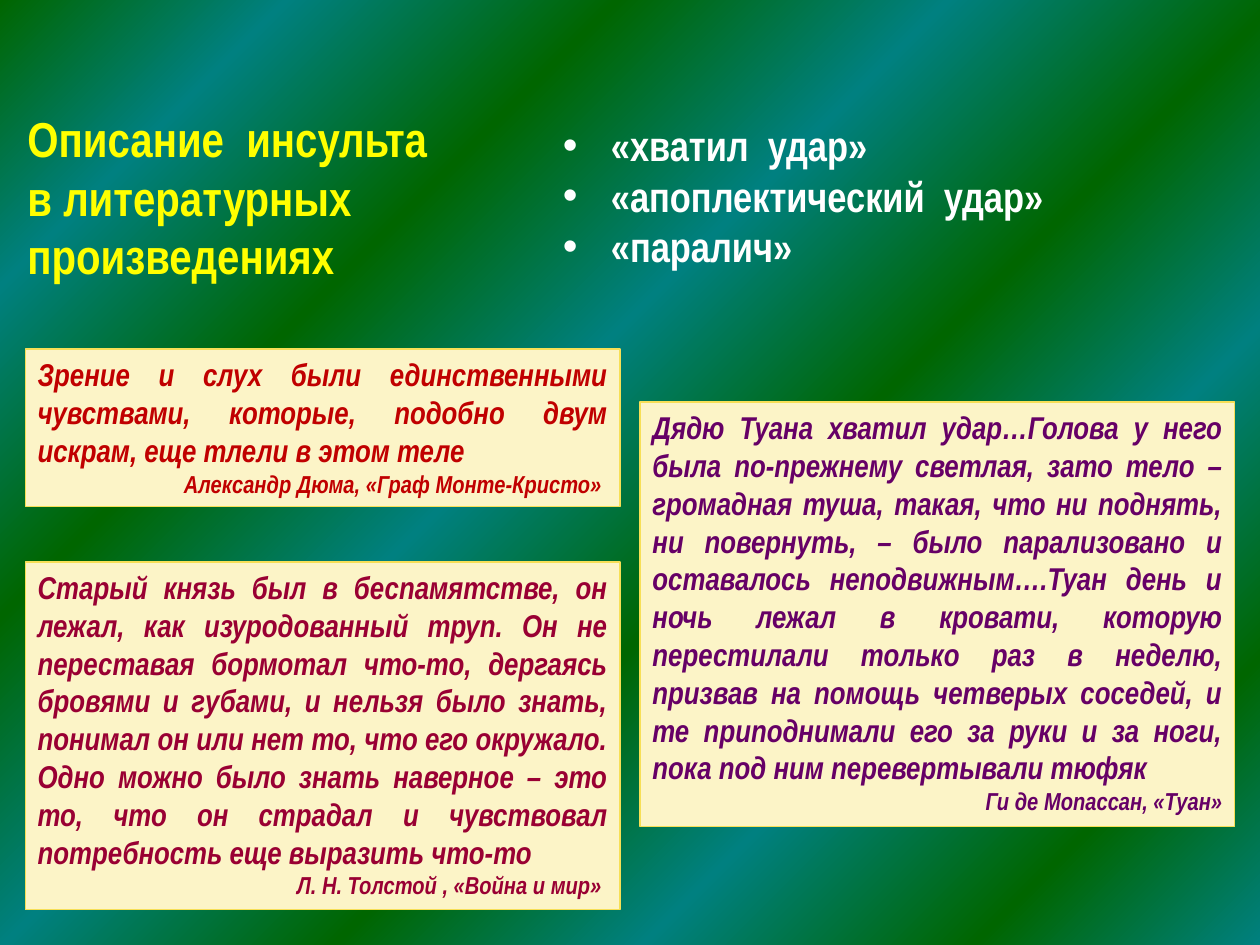
from dataclasses import dataclass

from lxml.etree import SubElement
from pptx import Presentation
from pptx.dml.color import RGBColor
from pptx.enum.shapes import MSO_SHAPE
from pptx.enum.text import MSO_ANCHOR, MSO_AUTO_SIZE, PP_ALIGN
from pptx.oxml.ns import qn
from pptx.util import Inches, Pt


@dataclass(frozen=True)
class Theme:
    font: str = "Arial Narrow"
    green: str = "006600"
    teal: str = "008080"
    title: str = "FFFF00"
    bullet: str = "FFFFFF"
    card: str = "FCF4C7"
    card_line: str = "F7DF56"
    red: str = "C00000"
    crimson: str = "990033"
    purple: str = "660066"
    title_size: int = 28
    bullet_size: int = 24
    quote_size: int = 18
    source_size: int = 14


class SlideBuilder:
    def __init__(self, slide, theme):
        self.slide = slide
        self.theme = theme

    def background(self, positions, angle):
        """Diagonal stripes that alternate between green and teal."""
        fill = self.slide.background.fill
        fill.gradient()
        gradient = self.slide.background._cSld.find(".//" + qn("a:gradFill"))
        for child in list(gradient):
            gradient.remove(child)
        stops = SubElement(gradient, qn("a:gsLst"))
        for index, position in enumerate(positions):
            stop = SubElement(stops, qn("a:gs"), pos=str(position * 1000))
            color = self.theme.teal if index % 2 else self.theme.green
            SubElement(stop, qn("a:srgbClr"), val=color)
        SubElement(gradient, qn("a:lin"), ang=str(angle * 60000), scaled="0")

    def prepare(self, shape):
        frame = shape.text_frame
        frame.word_wrap = True
        frame.auto_size = MSO_AUTO_SIZE.SHAPE_TO_FIT_TEXT
        return frame

    def paragraph(self, frame, text, size, color, align=PP_ALIGN.LEFT, italic=False, bullet=False):
        first = frame.paragraphs[0]
        paragraph = frame.add_paragraph() if first.runs else first
        paragraph.alignment = align
        if bullet:
            properties = paragraph._p.get_or_add_pPr()
            indent = Inches(0.38)
            properties.set("marL", str(indent))
            properties.set("indent", str(-indent))
            SubElement(properties, qn("a:buFont"), typeface="Arial")
            SubElement(properties, qn("a:buChar"), char="•")
        run = paragraph.add_run()
        run.text = text
        font = run.font
        font.name = self.theme.font
        font.size = Pt(size)
        font.bold = True
        font.italic = italic
        font.color.rgb = RGBColor.from_string(color)

    def text(self, left, top, width, height, lines, size, color, bullet=False):
        box = self.slide.shapes.add_textbox(
            Inches(left), Inches(top), Inches(width), Inches(height))
        frame = self.prepare(box)
        for line in lines:
            self.paragraph(frame, line, size, color, bullet=bullet)

    def quote(self, left, top, height, color, words, source):
        card = self.slide.shapes.add_shape(
            MSO_SHAPE.RECTANGLE, Inches(left), Inches(top), Inches(4.72), Inches(height))
        card.shadow.inherit = False
        card.fill.solid()
        card.fill.fore_color.rgb = RGBColor.from_string(self.theme.card)
        card.line.color.rgb = RGBColor.from_string(self.theme.card_line)
        card.line.width = Pt(0.75)
        frame = self.prepare(card)
        frame.vertical_anchor = MSO_ANCHOR.TOP
        self.paragraph(frame, words, self.theme.quote_size, color, PP_ALIGN.JUSTIFY, italic=True)
        self.paragraph(frame, source, self.theme.source_size, color, PP_ALIGN.RIGHT, italic=True)


def main():
    presentation = Presentation()
    presentation.slide_width = Inches(10)
    presentation.slide_height = Inches(7.5)
    theme = Theme()
    builder = SlideBuilder(presentation.slides.add_slide(presentation.slide_layouts[6]), theme)

    # Background
    builder.background([0, 13, 28, 43, 58, 72, 87, 100], 45)

    # Title and old names of the illness
    builder.text(0.12, 0.81, 5.56, 1.51,
                 ["Описание  инсульта", "в литературных", "произведениях"],
                 theme.title_size, theme.title)
    builder.text(4.37, 0.9, 5.24, 1.31,
                 ["«хватил  удар»", "«апоплектический  удар»", "«паралич»"],
                 theme.bullet_size, theme.bullet, bullet=True)

    # Quotations
    left_column, right_column = 0.2, 5.08
    builder.quote(
        left_column, 2.77, 1.25, theme.red,
        "Зрение и слух были единственными чувствами, которые, подобно двум "
        "искрам, еще тлели в этом теле",
        "Александр Дюма, «Граф Монте-Кристо» ")
    builder.quote(
        left_column, 4.46, 2.76, theme.crimson,
        "Старый князь был в беспамятстве, он лежал, как изуродованный труп. "
        "Он не переставая бормотал что-то, дергаясь бровями и губами, и нельзя "
        "было знать, понимал он или нет то, что его окружало. Одно можно было "
        "знать наверное – это то, что он страдал и чувствовал потребность еще "
        "выразить что-то",
        "Л. Н. Толстой , «Война и мир» ")
    builder.quote(
        right_column, 3.19, 3.37, theme.purple,
        "Дядю Туана хватил удар…Голова у него была по-прежнему светлая, зато "
        "тело – громадная туша, такая, что ни поднять, ни повернуть, – было "
        "парализовано и оставалось неподвижным….Туан день и ночь лежал в "
        "кровати, которую перестилали только раз в неделю, призвав на помощь "
        "четверых соседей, и те приподнимали его за руки и за ноги, пока под "
        "ним перевертывали тюфяк",
        "Ги де Мопассан, «Туан»")

    presentation.save("out.pptx")


if __name__ == "__main__":
    main()
